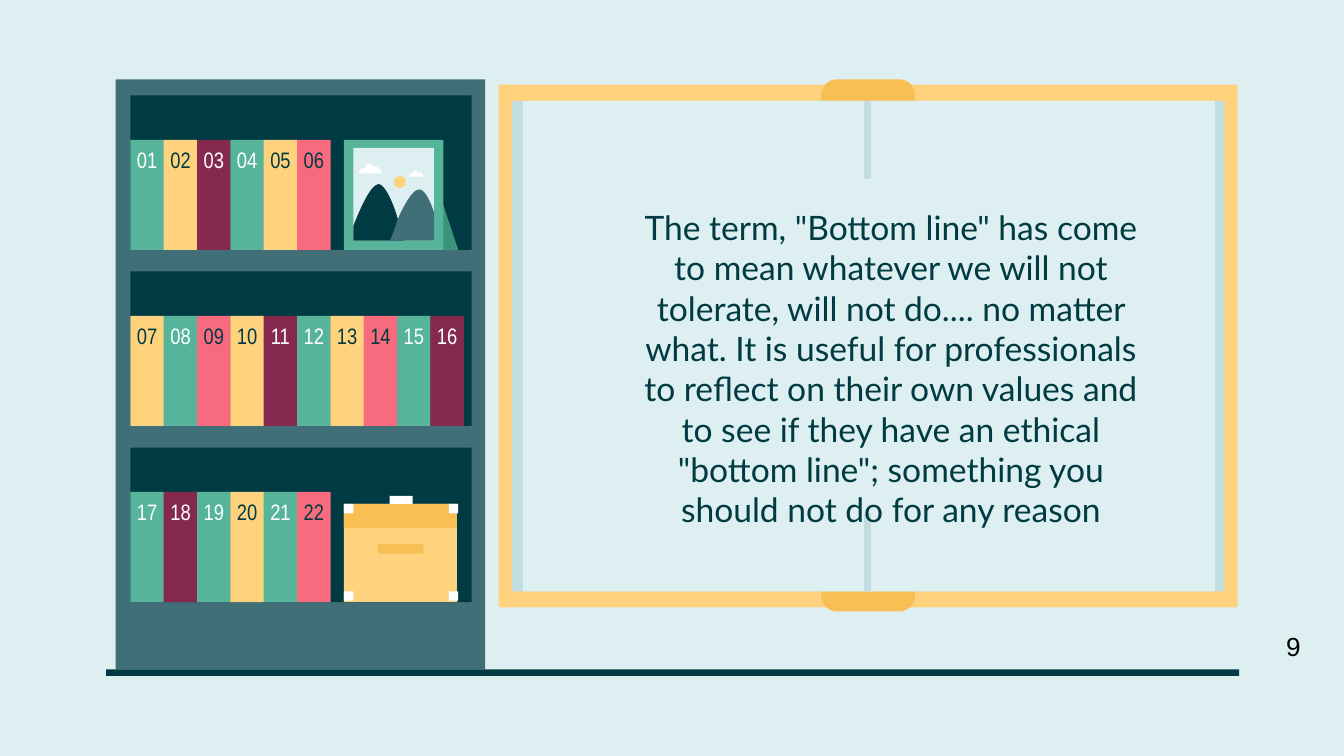
from pptx import Presentation
from pptx import util as u
from pptx.dml.color import RGBColor
from pptx.enum import shapes, text

PALE, SHADE, WHITE = "DEEFF1", "C2DDE0", "FFFFFF"
NAVY, SLATE = "003A42", "416F78"
YELLOW, AMBER = "FFD37E", "F8C054"
GREEN, DARK_GREEN, PLUM, PINK = "55B499", "3C927A", "86294E", "F86B7F"

RECT = shapes.MSO_SHAPE.RECTANGLE
SHELF_LEFT, SHELF_TOP, SHELF_PITCH = 0.97, 0.71, 1.31
BOOKS_PER_ROW, ROW_WIDTH = 10, 2.48
BOOK_PITCH = ROW_WIDTH / BOOKS_PER_ROW
SHELVES = [
    [GREEN, YELLOW, PLUM, GREEN, YELLOW, PINK],
    [YELLOW, GREEN, PINK, YELLOW, PLUM, GREEN, YELLOW, PINK, GREEN, PLUM],
    [GREEN, PLUM, GREEN, YELLOW, GREEN, PINK],
]
QUOTE = (
    'The term, "Bottom line" has come to mean whatever we will not tolerate, '
    "will not do.... no matter what. It is useful for professionals to reflect "
    "on their own values and to see if they have an ethical "
    '"bottom line"; something you should not do for any reason'
)


def rgb(color):
    return RGBColor.from_string(color)


def paint(shape, color):
    shape.fill.solid()
    shape.fill.fore_color.rgb = rgb(color)
    shape.line.fill.background()
    shape.shadow.inherit = False
    return shape


def add_block(parent, left, top, width, height, color, kind=RECT):
    box = [u.Inches(value) for value in (left, top, width, height)]
    return paint(parent.shapes.add_shape(kind, *box), color)


def curve_points(p0, p1, p2, p3, steps=12):
    """Points along a cubic curve, leaving out its start."""
    for step in range(1, steps + 1):
        t = step / steps
        weights = ((1 - t) ** 3, 3 * t * (1 - t) ** 2, 3 * t * t * (1 - t), t ** 3)
        yield tuple(
            sum(w * p[axis] for w, p in zip(weights, (p0, p1, p2, p3)))
            for axis in (0, 1)
        )


def add_outline(parent, start, segments, color, left=0, top=0, scale=1):
    """Each segment is one point for a line or three for a curve."""
    points = [start]
    for segment in segments:
        if len(segment) == 3:
            points.extend(curve_points(points[-1], *segment))
        else:
            points.extend(segment)
    lengths = [
        (u.Inches(left + x * scale), u.Inches(top + y * scale)) for x, y in points
    ]
    builder = parent.shapes.build_freeform(*lengths[0])
    builder.add_line_segments(lengths[1:], close=True)
    return paint(builder.convert_to_shape(), color)


def write_text(shape, words, font, size, color, align=None, margins=None, wrap=True):
    frame = shape.text_frame
    frame.word_wrap = wrap
    frame.vertical_anchor = text.MSO_ANCHOR.TOP
    if margins:
        frame.margin_left = frame.margin_right = u.Inches(margins[0])
        frame.margin_top = frame.margin_bottom = u.Inches(margins[1])
    paragraph = frame.paragraphs[0]
    paragraph.alignment = align
    run = paragraph.add_run()
    run.text = words
    run.font.name = font
    run.font.size = u.Pt(size)
    run.font.color.rgb = rgb(color)


def add_label(slide, left, top, width, height, words, **style):
    box = [u.Inches(value) for value in (left, top, width, height)]
    write_text(slide.shapes.add_textbox(*box), words, **style)


def add_open_book(slide):
    book = slide.shapes.add_group_shape()
    add_block(book, 3.71, 0.63, 5.5, 3.89, YELLOW)
    spine = add_block(book, 6.11, 0.59, 0.7, 3.96, AMBER,
                      shapes.MSO_SHAPE.ROUNDED_RECTANGLE)
    spine.adjustments[0] = 0.17
    add_block(book, 3.81, 0.75, 5.3, 3.65, SHADE)
    add_block(book, 3.89, 0.75, 5.15, 3.65, PALE)
    for top in (0.75, 3.82):
        add_block(book, 6.43, top, 0.05, 0.58, SHADE)


def add_bookcase(slide):
    add_block(slide, 0.86, 0.59, 2.75, 4.39, SLATE)
    number = 1
    for row, colors in enumerate(SHELVES):
        top = SHELF_TOP + row * SHELF_PITCH
        add_block(slide, SHELF_LEFT, top, 2.54, 1.15, NAVY)
        for column, color in enumerate(colors):
            left = SHELF_LEFT + column * BOOK_PITCH
            book = add_block(slide, left, top + 0.33, 0.25, 0.82, color)
            write_text(book, f"{number:02d}", font="Arial Narrow", size=12,
                       color=WHITE if color in (GREEN, PLUM) else NAVY,
                       align=text.PP_ALIGN.CENTER, margins=(0, 0.05))
            number += 1


def add_cloud(parent, left, top, scale):
    add_outline(parent, (0.08, 0), [
        [(0.06, 0), (0.05, 0.01), (0.05, 0.03)],
        [(0.02, 0.03), (0, 0.05), (0, 0.07)],
        [(0.17, 0.07)],
        [(0.17, 0.05), (0.16, 0.04), (0.15, 0.03)],
        [(0.14, 0.02), (0.12, 0.02), (0.1, 0.02)],
        [(0.1, 0.01), (0.09, 0), (0.08, 0)],
    ], WHITE, left, top, scale)


def add_framed_landscape(slide):
    frame = slide.shapes.add_group_shape()
    add_outline(frame, (3.27, 1.44), [[(3.27, 1.86)], [(3.41, 1.86)]], DARK_GREEN)
    add_block(frame, 2.56, 1.04, 0.74, 0.82, GREEN)
    add_block(frame, 2.63, 1.1, 0.6, 0.69, PALE)
    # Mountains
    add_outline(frame, (2.82, 1.37), [
        [(2.76, 1.37), (2.68, 1.55), (2.63, 1.68)],
        [(2.63, 1.79)],
        [(3.01, 1.79)],
        [(3, 1.76), (2.98, 1.7), (2.96, 1.63)],
        [(2.93, 1.52), (2.87, 1.38), (2.82, 1.37)],
    ], NAVY)
    add_outline(frame, (3.12, 1.41), [
        [(3.07, 1.41), (3.01, 1.52), (2.96, 1.63)],
        [(2.94, 1.7), (2.92, 1.75), (2.9, 1.79)],
        [(3.23, 1.79)],
        [(3.23, 1.58)],
        [(3.2, 1.49), (3.16, 1.41), (3.12, 1.41)],
    ], SLATE)
    # Sky
    add_block(frame, 2.93, 1.31, 0.09, 0.09, YELLOW, shapes.MSO_SHAPE.OVAL)
    add_cloud(frame, 2.67, 1.22, 1)
    add_cloud(frame, 3.04, 1.27, 0.65)


def add_suitcase(slide):
    case = slide.shapes.add_group_shape()
    add_block(case, 2.56, 3.75, 0.84, 0.73, YELLOW)
    add_block(case, 2.56, 3.75, 0.84, 0.18, AMBER)
    add_block(case, 2.81, 4.05, 0.34, 0.07, AMBER)
    for top in (3.75, 4.4):
        for left in (2.56, 3.34):
            add_block(case, left, top, 0.07, 0.07, WHITE)
    add_block(case, 2.9, 3.69, 0.17, 0.06, WHITE)


def main():
    presentation = Presentation()
    presentation.slide_width = u.Inches(10)
    presentation.slide_height = u.Inches(10 * 9 / 16)
    slide = presentation.slides.add_slide(presentation.slide_layouts[6])
    slide.background.fill.solid()
    slide.background.fill.fore_color.rgb = rgb(PALE)

    # Quote on the open book
    add_open_book(slide)
    add_label(slide, 4.61, 1.44, 4.04, 0.44, QUOTE, font="Lato", size=18,
              color=NAVY, align=text.PP_ALIGN.CENTER, margins=(0.1, 0.1))

    # Bookcase and its contents
    add_bookcase(slide)
    add_framed_landscape(slide)
    add_suitcase(slide)

    # Floor and page number
    add_block(slide, 0.79, 4.98, 8.43, 0.05, NAVY)
    add_label(slide, 9.47, 4.64, 0.31, 0.34, "9", font="Arial", size=14,
              color="000000", wrap=False)
    presentation.save("out.pptx")


if __name__ == "__main__":
    main()
